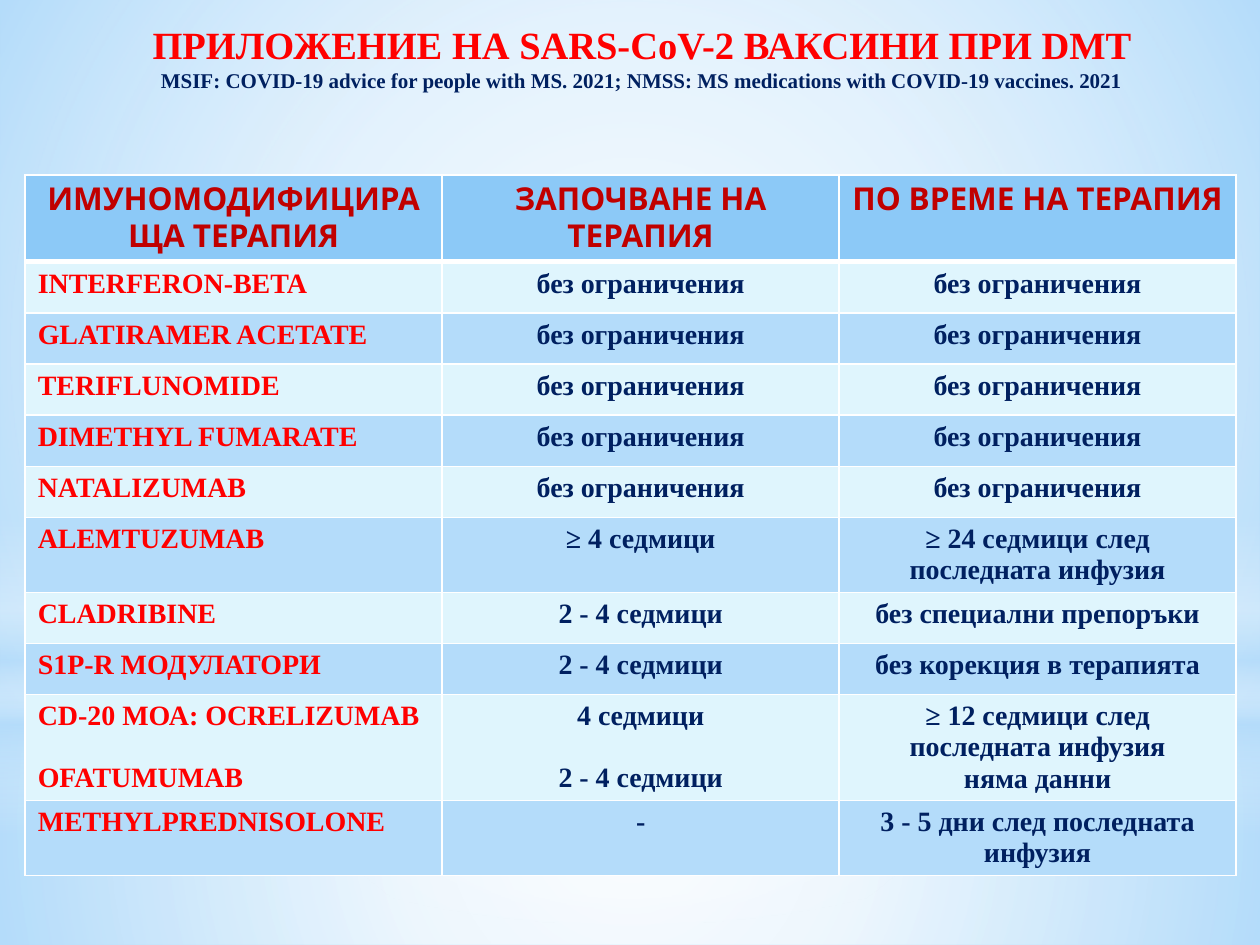
"""Builds a slide on SARS-CoV-2 vaccination during disease-modifying therapy."""
from dataclasses import dataclass

from pptx import Presentation
from pptx.dml.color import RGBColor
from pptx.enum.shapes import MSO_SHAPE as Shape
from pptx.enum.text import MSO_ANCHOR as Anchor, MSO_AUTO_SIZE as AutoSize, PP_ALIGN as Align
from pptx.oxml import parse_xml
from pptx.oxml.ns import nsdecls
from pptx.util import Inches, Pt


@dataclass(frozen=True)
class Theme:
    sky: str = "B4DCFA"
    pale: str = "DFF5FD"
    header: str = "8CC9F7"
    white: str = "FFFFFF"
    red: str = "FF0000"
    crimson: str = "C00000"
    navy: str = "002060"
    serif: str = "Times New Roman"
    sans: str = "Karla"
    title_size: float = 22
    source_size: float = 12
    header_size: float = 18
    body_size: float = 16
    line_gap: float = 17.7
    thin: float = 1
    thick: float = 3


class Slide:
    COLUMNS, ROWS = 100, 75

    def __init__(self, deck, theme):
        self.theme = theme
        self.width, self.height = deck.slide_width, deck.slide_height
        self.page = deck.slides.add_slide(deck.slide_layouts[5])
        fill = self.page.background.fill
        fill.solid()
        fill.fore_color.rgb = RGBColor.from_string(theme.sky)

    def across(self, columns):
        return round(self.width * columns / self.COLUMNS)

    def down(self, rows):
        return round(self.height * rows / self.ROWS)

    def area(self, left, top, width, height):
        return self.across(left), self.down(top), self.across(width), self.down(height)

    def style(self, para, font, size, color, align=Align.CENTER):
        para.alignment = align
        for span in para.runs:
            span.font.name, span.font.size, span.font.bold = font, Pt(size), True
            span.font.color.rgb = RGBColor.from_string(color)

    def glow(self, kind, area, stops, direction):
        shape = self.page.shapes.add_shape(kind, *self.area(*area))
        shape.shadow.inherit = False
        shape.line.fill.background()
        marks = "".join(
            f'<a:gs pos="{position * 1000}"><a:srgbClr val="{color}">'
            f'<a:alpha val="{opacity * 1000}"/></a:srgbClr></a:gs>'
            for position, color, opacity in stops
        )
        shape.element.spPr.insert(2, parse_xml(
            f'<a:gradFill {nsdecls("a")} rotWithShape="1"><a:gsLst>{marks}</a:gsLst>'
            f'{direction}</a:gradFill>'
        ))

    def title(self, area, heading, source):
        theme = self.theme
        title = self.page.shapes.title
        self.page.shapes.element.append(title.element)
        title.left, title.top, title.width, title.height = self.area(*area)
        frame = title.text_frame
        frame.text = f"{heading}\n{source}"
        frame.word_wrap, frame.auto_size = True, AutoSize.NONE
        frame.vertical_anchor, frame.margin_top = Anchor.TOP, Inches(0.12)
        first, second = frame.paragraphs
        self.style(first, theme.serif, theme.title_size, theme.red)
        self.style(second, theme.serif, theme.source_size, theme.navy)
        for para in frame.paragraphs:
            para.line_spacing, para.space_before = 1.0, Pt(0)
        indent = title.element.txBody.p_lst[0].get_or_add_pPr()
        indent.set("marL", str(Inches(0.17)))

    def fill_cell(self, cell, color, top, bottom):
        cell.fill.solid()
        cell.fill.fore_color.rgb = RGBColor.from_string(color)
        thin = self.theme.thin
        sides = {"L": thin, "R": thin, "T": top, "B": bottom}
        for place, (side, weight) in enumerate(sides.items()):
            cell._tc.get_or_add_tcPr().insert(place, parse_xml(
                f'<a:ln{side} {nsdecls("a")} w="{Pt(weight)}"><a:solidFill>'
                f'<a:srgbClr val="{self.theme.white}"/></a:solidFill></a:ln{side}>'
            ))

    def table(self, left, top, widths, row_height, rows, spaced):
        theme = self.theme
        place = self.area(left, top, sum(widths), row_height * len(rows))
        table = self.page.shapes.add_table(len(rows), len(widths), *place).table
        for column, width in zip(table.columns, widths):
            column.width = self.across(width)
        for r, texts in enumerate(rows):
            table.rows[r].height = self.down(row_height)
            color = theme.header if r == 0 else theme.pale if r % 2 else theme.sky
            above = theme.thick if r == 1 else theme.thin
            below = theme.thick if r == 0 else theme.thin
            for c, text in enumerate(texts):
                cell = table.cell(r, c)
                cell.text_frame.text = text
                self.fill_cell(cell, color, above, below)
                for para in cell.text_frame.paragraphs:
                    if r == 0:
                        self.style(para, theme.sans, theme.header_size, theme.crimson)
                    elif c == 0:
                        self.style(para, theme.serif, theme.body_size, theme.red, Align.LEFT)
                    else:
                        self.style(para, theme.serif, theme.body_size, theme.navy)
                if (r, c) in spaced:
                    cell.text_frame.paragraphs[-1].space_before = Pt(theme.line_gap)


def main():
    deck = Presentation()
    deck.slide_width, deck.slide_height = Inches(10), Inches(7.5)
    theme = Theme()
    slide = Slide(deck, theme)
    white, sky = theme.white, theme.sky

    radial = '<a:path path="circle"><a:fillToRect l="50000" t="50000" r="50000" b="50000"/></a:path>'
    downward = '<a:lin ang="5400000" scaled="0"/>'
    band = [(0, white, 0), (29, white, 30), (45, sky, 40),
            (55, white, 26), (65, sky, 60), (100, white, 0)]
    for kind, area, stops, direction in [
        (Shape.RECTANGLE, (0, 55.8, 100, 19.2),
         [(0, white, 91), (37, white, 76), (100, sky, 79)], radial),
        (Shape.RECTANGLE, (0, 0, 100, 55.8),
         [(0, white, 89), (48, white, 62), (100, sky, 79)], radial),
        (Shape.RECTANGLE, (0, 41.2, 100, 25), band, downward),
        (Shape.OVAL, (0, 17.5, 100, 55.8), [(0, white, 100), (56, white, 0)], radial),
    ]:
        slide.glow(kind, area, stops, direction)

    slide.title(
        (5.1, 0.5, 90, 11),
        "ПРИЛОЖЕНИЕ НА SARS-CoV-2 ВАКСИНИ ПРИ DMT",
        "MSIF: COVID-19 advice for people with MS. 2021; "
        "NMSS: MS medications with COVID-19 vaccines. 2021",
    )

    free = "без ограничения"
    unrestricted = ["INTERFERON-BETA", "GLATIRAMER ACETATE", "TERIFLUNOMIDE",
                    "DIMETHYL FUMARATE", "NATALIZUMAB"]
    rows = [
        ("ИМУНОМОДИФИЦИРАЩА ТЕРАПИЯ", "ЗАПОЧВАНЕ НА ТЕРАПИЯ", "ПО ВРЕМЕ НА ТЕРАПИЯ"),
        *((name, free, free) for name in unrestricted),
        ("ALEMTUZUMAB", "≥ 4 седмици", "≥ 24 седмици след последната инфузия"),
        ("CLADRIBINE", "2 - 4 седмици", "без специални препоръки"),
        ("S1P-R МОДУЛАТОРИ", "2 - 4 седмици", "без корекция в терапията"),
        ("CD-20 МОА: ОCRELIZUMAB\nOFATUMUMAB", "4 седмици\n2 - 4 седмици",
         "≥ 12 седмици след последната инфузия\nняма данни"),
        ("METHYLPREDNISOLONE", "-", "3 - 5 дни след последната инфузия"),
    ]
    slide.table(2, 13.9, (33.1, 31.5, 31.5), 4.06, rows, {(9, 0), (9, 1)})
    deck.save("out.pptx")


if __name__ == "__main__":
    main()
